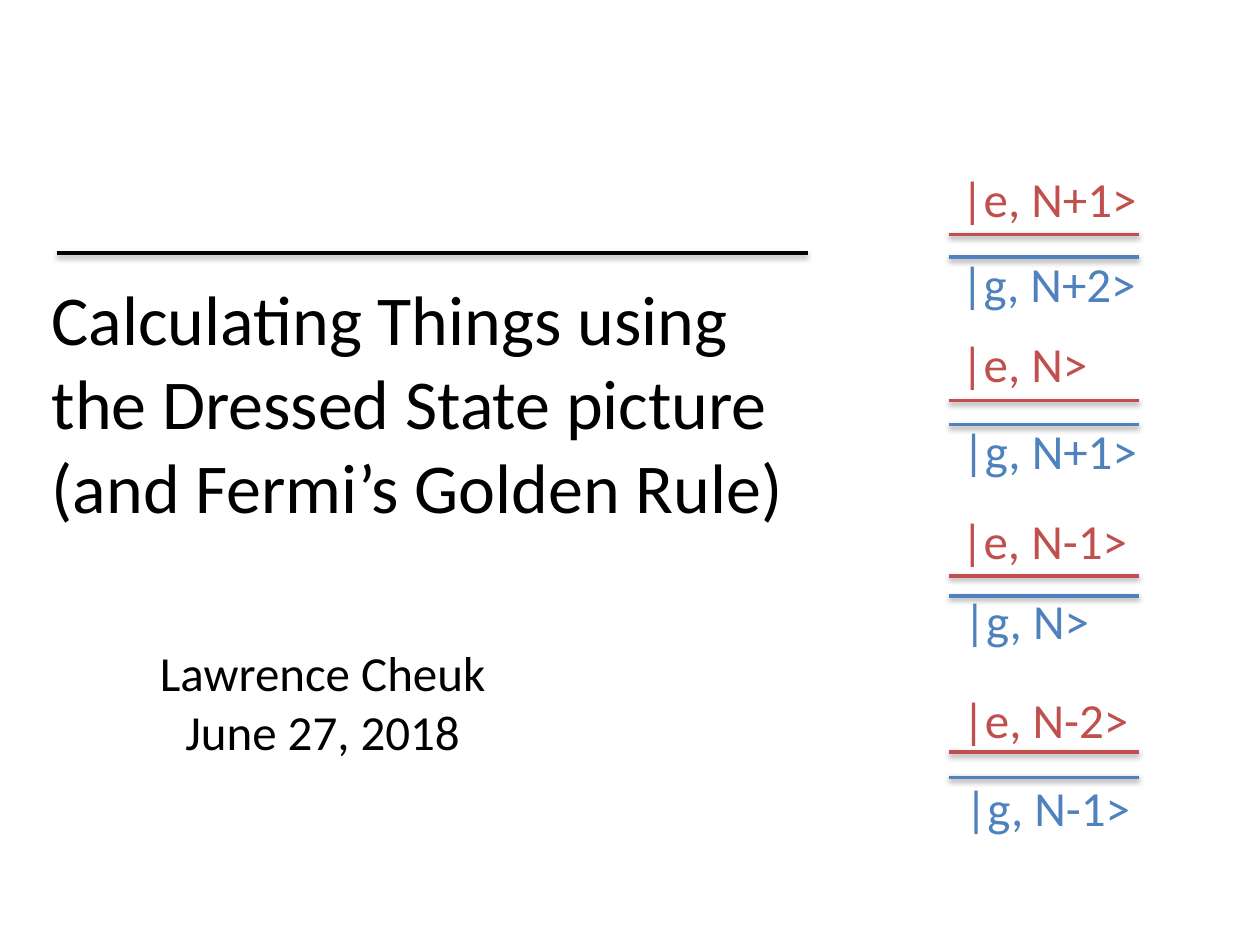
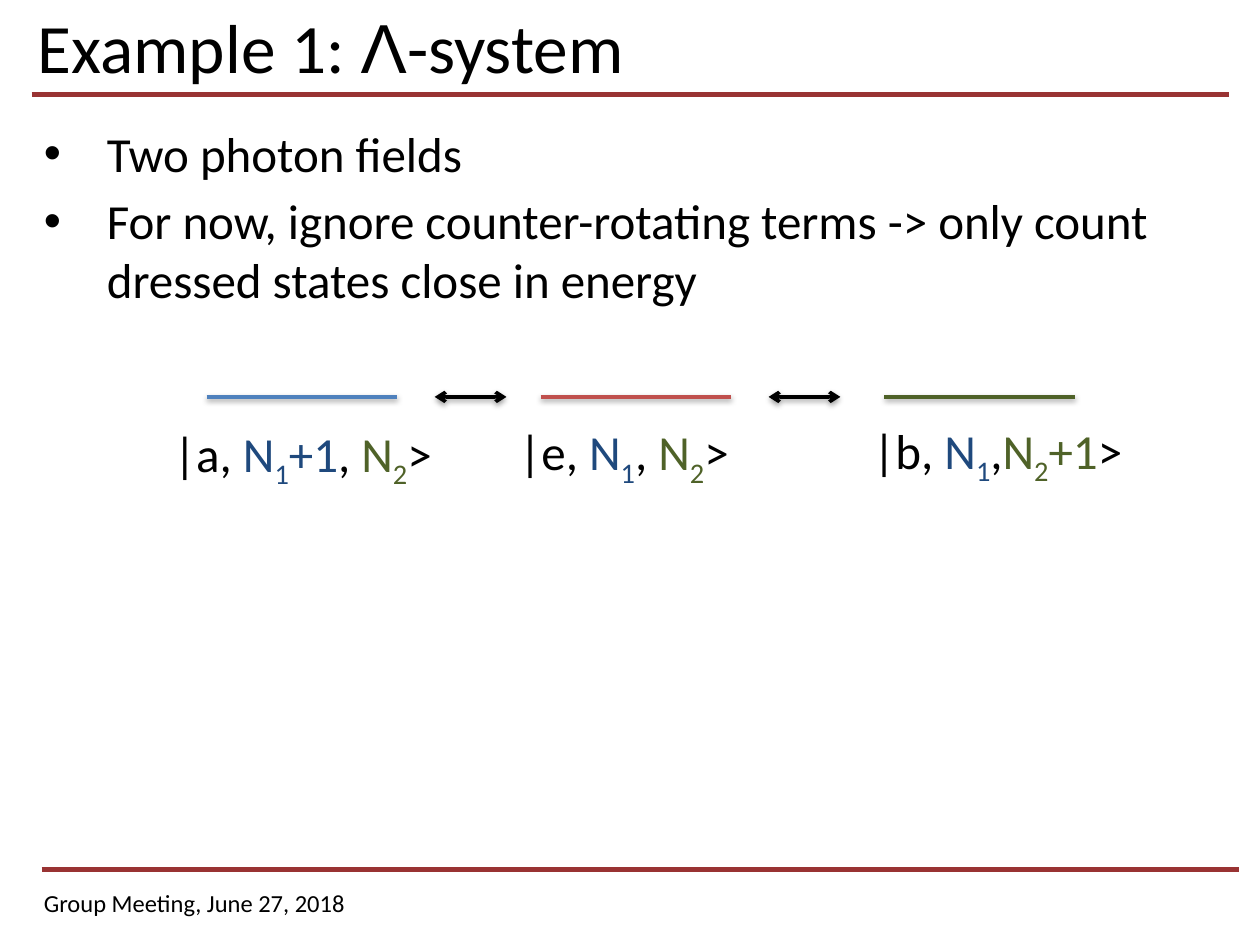
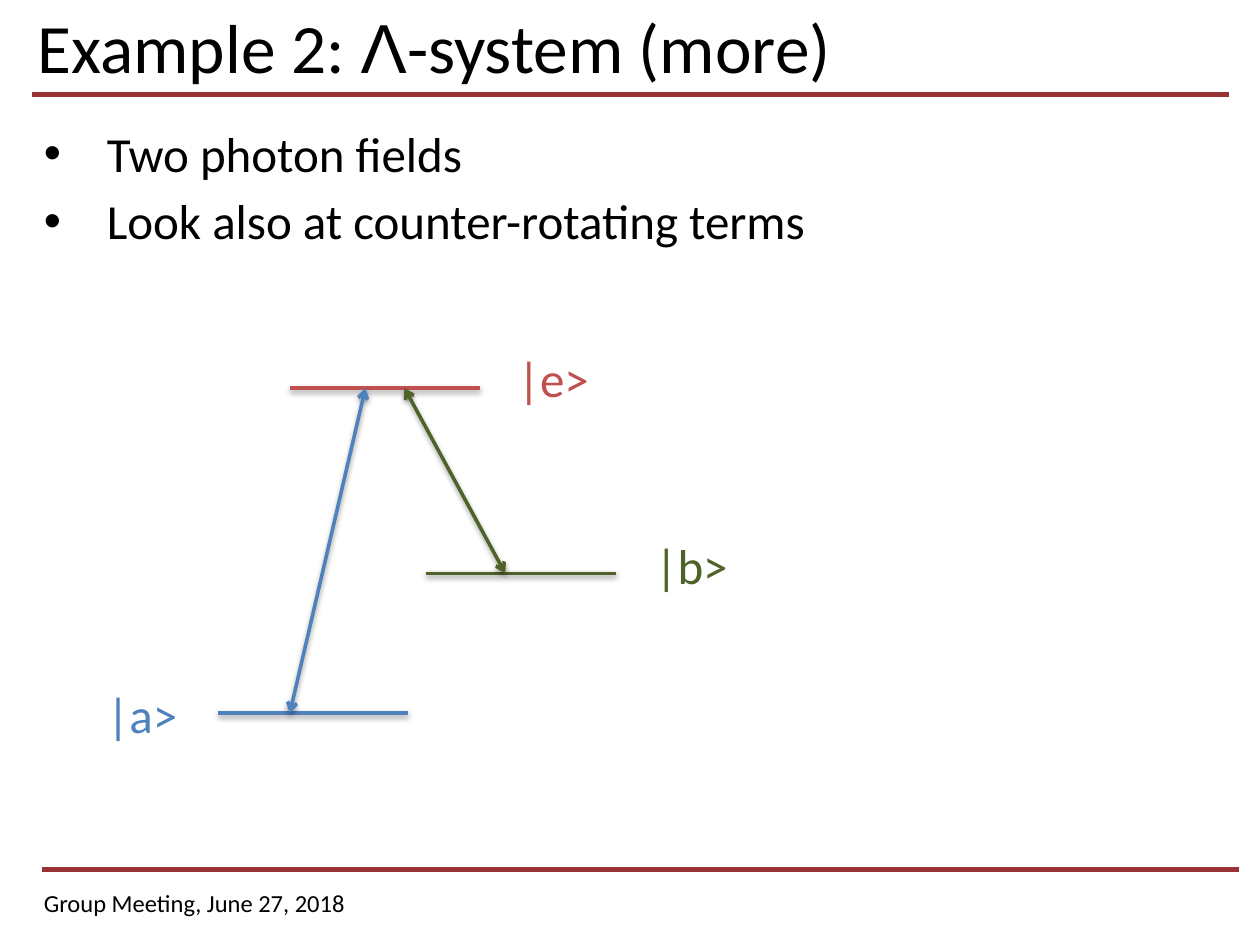
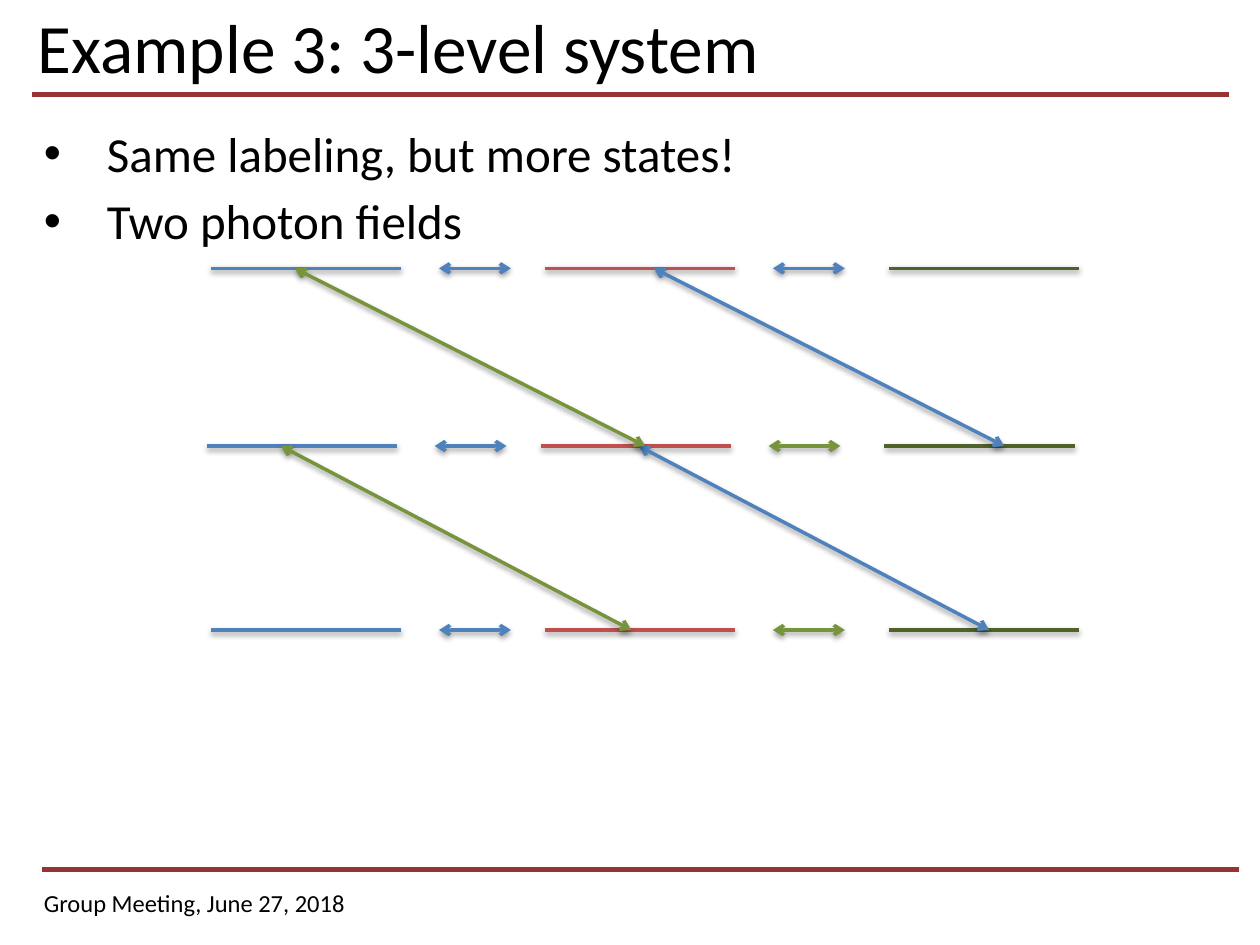
from dataclasses import dataclass
from lxml import etree
from pptx import Presentation
from pptx.dml.color import RGBColor
from pptx.enum.shapes import MSO_CONNECTOR
from pptx.enum.text import MSO_ANCHOR, MSO_AUTO_SIZE, PP_ALIGN
from pptx.oxml.ns import qn
from pptx.util import Inches, Pt

STRAIGHT = MSO_CONNECTOR.STRAIGHT
TOP, MIDDLE = MSO_ANCHOR.TOP, MSO_ANCHOR.MIDDLE
LEFT, CENTER = PP_ALIGN.LEFT, PP_ALIGN.CENTER
FIT_SHAPE, NO_FIT = MSO_AUTO_SIZE.SHAPE_TO_FIT_TEXT, MSO_AUTO_SIZE.NONE

# The slide is a grid of 100 columns by 75 rows
WIDTH, HEIGHT = Inches(10), Inches(7.5)
COL, ROW = WIDTH / 100, HEIGHT / 75

COLORS = {
    "black": "000000", "band": "993333", "blue": "4F81BD", "red": "C0504D",
    "green": "77933C", "dark_green": "4F6228", "navy": "1F497D",
}
FONT, SYMBOL_FONT = "Calibri", "Arial"
BODY_SIZE = 28
LABEL_HEIGHT = 5.7
LEVEL_WIDTH, ARROW_WIDTH = 15.1, 5.7
BREAK = "\v"


@dataclass(frozen=True)
class Box:
    x: float
    y: float
    w: float
    h: float = LABEL_HEIGHT

    def emu(self) -> tuple[int, int, int, int]:
        return (int(self.x * COL), int(self.y * ROW),
                int(self.w * COL), int(self.h * ROW))


@dataclass(frozen=True)
class Run:
    text: str
    color: str | None = None
    font: str = FONT
    sub: bool = False


@dataclass(frozen=True)
class Label:
    text: str
    box: Box
    color: str


@dataclass(frozen=True)
class Line:
    x1: float
    y1: float
    x2: float
    y2: float
    color: str
    arrows: bool = False


Paragraph = str | list[Run]


# Text
def write_text(tf, paragraphs: list[Paragraph], *, size: float = BODY_SIZE,
               color: str = "black", align=LEFT, anchor=TOP, wrap: bool = True,
               fit=NO_FIT, bullets: bool = False) -> None:
    tf.word_wrap, tf.auto_size, tf.vertical_anchor = wrap, fit, anchor
    for i, runs in enumerate(paragraphs):
        p = tf.paragraphs[0] if i == 0 else tf.add_paragraph()
        p.alignment = align
        if bullets:
            pPr = p._p.get_or_add_pPr()
            pPr.set("marL", str(Inches(0.5)))
            pPr.set("indent", str(-Inches(0.5)))
            etree.SubElement(pPr, qn("a:buFont"), typeface=SYMBOL_FONT)
            etree.SubElement(pPr, qn("a:buChar"), char="•")
            if i:
                p.space_before = Pt(5)
        for run in [Run(runs)] if isinstance(runs, str) else runs:
            if run.text == BREAK:
                p.add_line_break()
                etree.SubElement(p._p[-1], qn("a:rPr"), sz=str(int(size * 100)))
                continue
            r = p.add_run()
            r.text = run.text
            r.font.size, r.font.name = Pt(size), run.font
            r.font.color.rgb = RGBColor.from_string(COLORS[run.color or color])
            if run.sub:
                r.font._element.set("baseline", "-25000")


def add_text(s, box: Box, paragraphs: list[Paragraph], **fmt) -> None:
    write_text(s.shapes.add_textbox(*box.emu()).text_frame, paragraphs, **fmt)


def add_label(s, label: Label) -> None:
    add_text(s, label.box, [label.text], color=label.color, wrap=False, fit=FIT_SHAPE)


def set_title(s, box: Box, runs: Paragraph, **fmt) -> None:
    sp = s.shapes.title
    sp.left, sp.top, sp.width, sp.height = box.emu()
    write_text(sp.text_frame, [runs], **fmt)


# Lines
def add_line(s, line: Line, *, width: float = 2, shadow: bool = True) -> None:
    sp = s.shapes.add_connector(STRAIGHT, int(line.x1 * COL), int(line.y1 * ROW),
                                int(line.x2 * COL), int(line.y2 * ROW))
    sp.line.width = Pt(width)
    sp.line.color.rgb = RGBColor.from_string(COLORS[line.color])
    if line.arrows:
        ln = sp.line._get_or_add_ln()
        for end in ("a:headEnd", "a:tailEnd"):
            etree.SubElement(ln, qn(end), type="arrow")
    effects = etree.SubElement(sp._element.spPr, qn("a:effectLst"))
    if shadow:
        outer = etree.SubElement(effects, qn("a:outerShdw"), blurRad="40000",
                                 dist="20000", dir="5400000", rotWithShape="0")
        black = etree.SubElement(outer, qn("a:srgbClr"), val=COLORS["black"])
        etree.SubElement(black, qn("a:alpha"), val="38000")


def add_level(s, x: float, y: float, color: str) -> None:
    add_line(s, Line(x, y, x + LEVEL_WIDTH, y, color))


def add_ladder_row(s, y: float, arrow_colors: tuple[str, str], shift: float = 0) -> None:
    """Three levels side by side with a double arrow in each gap."""
    for x, color in ((16.4, "blue"), (42.9, "red"), (70.2, "dark_green")):
        add_level(s, x + shift, y, color)
    for x, color in zip((34.5, 61), arrow_colors):
        x += shift
        add_line(s, Line(x, y, x + ARROW_WIDTH, y, color, arrows=True))


# Slides
def new_slide(prs):
    return prs.slides.add_slide(prs.slide_layouts[5])


def example_slide(prs, title: Paragraph, bullets: list[Paragraph]):
    s = new_slide(prs)
    for x, y in ((2.5, 7.5), (3.3, 69)):
        add_line(s, Line(x, y, x + 95, y, "band"), width=3.25, shadow=False)
    add_text(s, Box(2.5, 70, 36.4, 3.4), ["Group Meeting, June 27, 2018"],
             size=14, fit=FIT_SHAPE)
    set_title(s, Box(2, 0.4, 88.6, 6.4), title, size=39.6, anchor=MIDDLE)
    add_text(s, Box(2.5, 9.3, 91.3, 55.3), bullets, bullets=True)
    return s


def cover(prs) -> None:
    s = new_slide(prs)
    set_title(s, Box(3.1, 21.4, 63.6, 22.3),
              [Run("Calculating Things using the Dressed State picture "), Run(BREAK),
               Run("(and Fermi’s Golden Rule)")], size=40)
    add_text(s, Box(11.5, 50.5, 28.2, 10.4), ["Lawrence Cheuk", "June 27, 2018"],
             align=CENTER, wrap=False, fit=FIT_SHAPE)
    add_line(s, Line(4.5, 20.1, 64.1, 20.1, "black"))

    for color, heights in (("red", (18.6, 31.8, 45.7, 59.7)),
                           ("blue", (20.4, 33.7, 47.3, 61.7))):
        for y in heights:
            add_level(s, 75.3, y, color)
    for label in (
        Label("|e, N+1>", Box(75.3, 12.9, 16.1), "red"),
        Label("|g, N+2>", Box(75.3, 19.6, 16), "blue"),
        Label("|e, N>", Box(75.3, 26, 12.1), "red"),
        Label("|g, N+1>", Box(75.4, 32.9, 16), "blue"),
        Label("|e, N-1>", Box(75.3, 40, 15.3), "red"),
        Label("|g, N>", Box(75.5, 46.4, 12), "blue"),
        Label("|e, N-2>", Box(75.4, 54.2, 15.3), "red"),
        Label("|g, N-1>", Box(75.6, 61.2, 15.2), "blue"),
    ):
        add_label(s, label)


def lambda_title(number: int, ending: str) -> list[Run]:
    return [Run(f"Example {number}: "), Run("Λ", font=SYMBOL_FONT), Run(ending)]


def lambda_states(prs) -> None:
    s = example_slide(prs, lambda_title(1, "-system"), [
        "Two photon fields",
        "For now, ignore counter-rotating terms -> only count dressed states "
        "close in energy"])
    add_ladder_row(s, 31.5, ("black", "black"))

    n1 = [Run("N", "navy"), Run("1", "navy", sub=True)]
    n2 = [Run("N", "dark_green"), Run("2", "dark_green", sub=True)]
    for box, runs in (
        (Box(12.8, 33.1, 23.1),
         [Run("|a, "), *n1, Run("+1", "navy"), Run(", "), *n2, Run(">")]),
        (Box(40.2, 33, 19.2), [Run("|e, "), *n1, Run(", "), *n2, Run(">")]),
        (Box(68.3, 32.9, 22.4),
         [Run("|b, "), *n1, Run(","), *n2, Run("+1", "dark_green"), Run(">")]),
    ):
        add_text(s, box, [runs], wrap=False, fit=FIT_SHAPE)


def lambda_levels(prs) -> None:
    s = example_slide(prs, lambda_title(2, "-system (more)"), [
        "Two photon fields", "Look also at counter-rotating terms"])
    for x, y, label in (
        (17.3, 56.6, Label("|a>", Box(7.5, 53.8, 7.7), "blue")),
        (33.8, 45.5, Label("|b>", Box(51, 42, 7.8), "dark_green")),
        (23, 30.8, Label("|e>", Box(40.1, 27.2, 7.7), "red")),
    ):
        add_level(s, x, y, label.color)
        add_label(s, label)
    add_line(s, Line(23, 56.6, 29, 30.8, "blue", arrows=True))
    add_line(s, Line(40.1, 45.5, 32.1, 30.8, "dark_green", arrows=True))


def three_levels(prs) -> None:
    s = example_slide(prs, "Example 3: 3-level system", [
        "Same labeling, but more states!", "Two photon fields"])
    top, middle, bottom = 21.3, 35.4, 50
    add_ladder_row(s, top, ("blue", "blue"), shift=0.35)
    add_ladder_row(s, middle, ("blue", "green"))
    add_ladder_row(s, bottom, ("blue", "green"), shift=0.35)

    # Couplings between neighbouring rows
    for x, y1, y2, color in ((50.7, middle, bottom, "blue"),
                             (22.3, middle, bottom, "green"),
                             (51.9, top, middle, "blue"),
                             (23.4, top, middle, "green")):
        add_line(s, Line(x, y1, x + 27.8, y2, color, arrows=True))


def main() -> None:
    prs = Presentation()
    prs.slide_width, prs.slide_height = WIDTH, HEIGHT
    for build in (cover, lambda_states, lambda_levels, three_levels):
        build(prs)
    prs.save("out.pptx")


if __name__ == "__main__":
    main()
